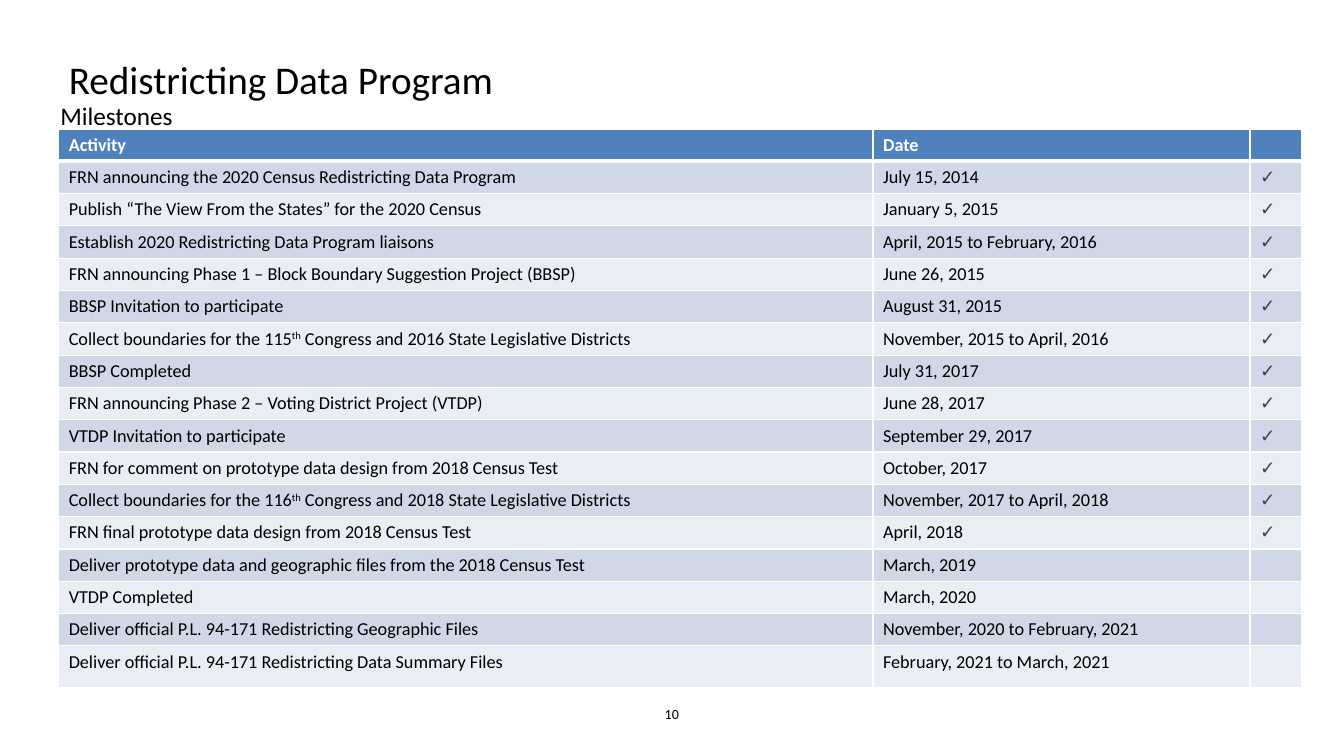
from lxml.etree import SubElement
from pptx import Presentation
from pptx.dml.color import RGBColor
from pptx.enum.text import MSO_ANCHOR, MSO_AUTO_SIZE, PP_ALIGN
from pptx.oxml.ns import qn
from pptx.util import Cm, Pt

# Content: activity, date, done; "^th^" marks superscript
TITLE = "Redistricting Data Program"
SUBTITLE = "Milestones"
PAGE = "10"
HEADER = ("Activity", "Date", "")
DONE = "✓"
MILESTONES = [
    ("FRN announcing the 2020 Census Redistricting Data Program", "July 15, 2014", DONE),
    ("Publish “The View From the States” for the 2020 Census", "January 5, 2015", DONE),
    ("Establish 2020 Redistricting Data Program liaisons", "April, 2015 to February, 2016", DONE),
    ("FRN announcing Phase 1 – Block Boundary Suggestion Project (BBSP)", "June 26, 2015", DONE),
    ("BBSP Invitation to participate", "August 31, 2015", DONE),
    ("Collect boundaries for the 115^th^ Congress and 2016 State Legislative Districts",
     "November, 2015 to April, 2016", DONE),
    ("BBSP Completed", "July 31, 2017", DONE),
    ("FRN announcing Phase 2 – Voting District Project (VTDP)", "June 28, 2017", DONE),
    ("VTDP Invitation to participate", "September 29, 2017", DONE),
    ("FRN for comment on prototype data design from 2018 Census Test", "October, 2017", DONE),
    ("Collect boundaries for the 116^th^ Congress and 2018 State Legislative Districts",
     "November, 2017 to April, 2018", DONE),
    ("FRN final prototype data design from 2018 Census Test", "April, 2018", DONE),
    ("Deliver prototype data and geographic files from the 2018 Census Test", "March, 2019", ""),
    ("VTDP Completed", "March, 2020", ""),
    ("Deliver official P.L. 94-171 Redistricting Geographic Files",
     "November, 2020 to February, 2021", ""),
    ("Deliver official P.L. 94-171 Redistricting Data Summary Files",
     "February, 2021 to March, 2021", ""),
]

FONT = "Calibri"
BLACK = RGBColor(0x00, 0x00, 0x00)
WHITE = RGBColor(0xFF, 0xFF, 0xFF)
GREY = RGBColor(0x40, 0x40, 0x40)
BLUE = RGBColor(0x4F, 0x81, 0xBD)
BANDS = (RGBColor(0xE9, 0xED, 0xF4), RGBColor(0xD0, 0xD8, 0xE8))

LEFT, WIDTH = Cm(1.48), Cm(31.31)
COLUMNS = (Cm(20.52), Cm(9.5), Cm(1.29))
ROW, LAST_ROW = Cm(0.81), Cm(1.04)
CELL_SIZE = 13


def add_text(p, text, size, color=BLACK, bold=False):
    for i, part in enumerate(text.split("^")):
        r = p.add_run()
        r.text = part
        r.font.name, r.font.size, r.font.bold = FONT, Pt(size), bold
        r.font.color.rgb = color
        if i % 2:
            r.font._element.set("baseline", "30000")


def add_label(s, box, text, size, align=PP_ALIGN.LEFT):
    tf = s.shapes.add_textbox(*box).text_frame
    tf.word_wrap = True
    tf.paragraphs[0].alignment = align
    add_text(tf.paragraphs[0], text, size)


def set_borders(cell, bottom):
    tcPr = cell._tc.get_or_add_tcPr()
    for side, width in (("L", 1), ("R", 1), ("T", 1), ("B", bottom)):
        ln = SubElement(tcPr, qn(f"a:ln{side}"), w=str(Pt(width)))
        fill = SubElement(ln, qn("a:solidFill"))
        SubElement(fill, qn("a:srgbClr"), val=str(WHITE))


def fill_cell(cell, text, row, col):
    header = row == 0
    set_borders(cell, 3 if header else 1)
    cell.fill.solid()
    cell.fill.fore_color.rgb = BLUE if header else BANDS[row % 2]
    p = cell.text_frame.paragraphs[0]
    if text:
        color = WHITE if header else GREY if col == 2 else BLACK
        add_text(p, text, CELL_SIZE, color, header)
    else:
        # Keep empty cells from stretching the row
        SubElement(p._p, qn("a:endParaRPr"), sz=str(CELL_SIZE * 100))


def main():
    prs = Presentation()
    prs.slide_width, prs.slide_height = Cm(33.87), Cm(19.05)
    s = prs.slides.add_slide(prs.slide_layouts[5])

    # Title
    title = s.shapes.title
    title.left, title.top, title.width, title.height = LEFT, Cm(1.27), WIDTH, Cm(1.27)
    tf = title.text_frame
    tf.auto_size, tf.vertical_anchor = MSO_AUTO_SIZE.NONE, MSO_ANCHOR.TOP
    tf.paragraphs[0].alignment = PP_ALIGN.LEFT
    add_text(tf.paragraphs[0], TITLE, 28)

    # Milestone table
    rows = [HEADER] + MILESTONES
    height = ROW * len(MILESTONES) + LAST_ROW
    table = s.shapes.add_table(len(rows), len(COLUMNS), LEFT, Cm(3.25), WIDTH, height).table
    for column, width in zip(table.columns, COLUMNS):
        column.width = width
    for i, texts in enumerate(rows):
        table.rows[i].height = LAST_ROW if i == len(rows) - 1 else ROW
        for j, text in enumerate(texts):
            fill_cell(table.cell(i, j), text, i, j)

    # Subtitle and page number
    add_label(s, (Cm(1.27), Cm(2.41), Cm(8.46), Cm(1.02)), SUBTITLE, 18)
    add_label(s, (Cm(12.98), Cm(17.65), Cm(7.9), Cm(1.02)), PAGE, 10, PP_ALIGN.CENTER)

    prs.save("out.pptx")


if __name__ == "__main__":
    main()
